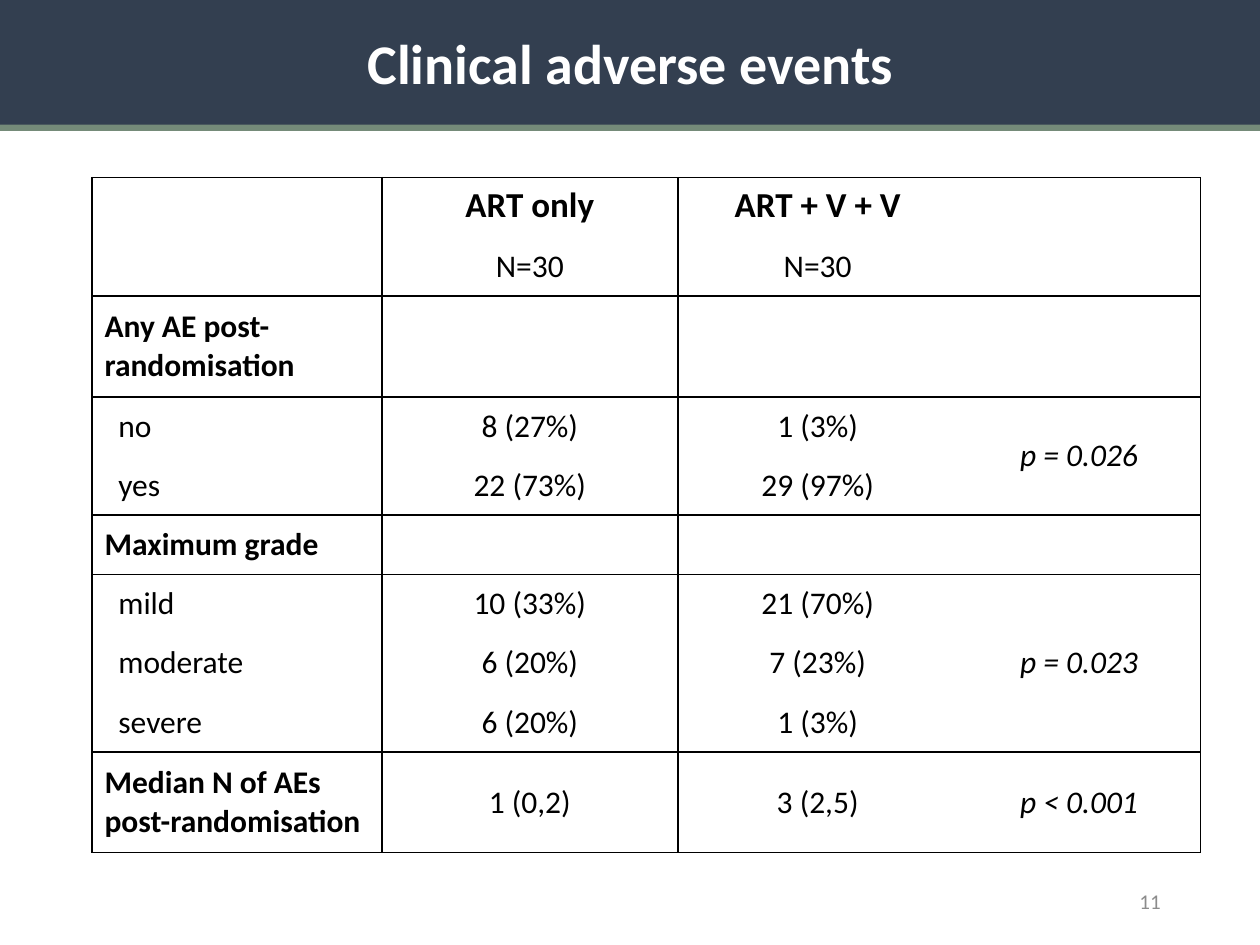
from dataclasses import dataclass

from lxml import etree
from pptx import Presentation
from pptx.dml.color import RGBColor
from pptx.enum.shapes import MSO_CONNECTOR, MSO_SHAPE
from pptx.enum.text import MSO_ANCHOR, PP_ALIGN
from pptx.oxml.ns import qn
from pptx.util import Inches, Pt

LEFT, CENTER, RIGHT = PP_ALIGN.LEFT, PP_ALIGN.CENTER, PP_ALIGN.RIGHT
MIDDLE, TOP = MSO_ANCHOR.MIDDLE, MSO_ANCHOR.TOP


@dataclass(frozen=True)
class Theme:
    font: str = "Calibri"
    banner: str = "333F50"
    accent: str = "758B79"
    light: str = "FFFFFF"
    ink: str = "000000"
    muted: str = "8C8C8C"
    title_size: int = 32
    arm_size: int = 20
    body_size: int = 18
    number_size: int = 12
    rule_width: float = 1
    accent_width: float = 4.5


@dataclass(frozen=True)
class Row:
    label: str = ""
    art_only: str = ""
    art_plus: str = ""
    p_value: str = ""
    heading: bool = False  # bold label, no indent
    p_span: int = 1        # rows covered by the p value
    ends_group: bool = False
    height: float = 0.47


THEME = Theme()
COLUMN_WIDTHS = (2.3, 2.35, 2.22, 1.93)
RULED_COLUMNS = (0, 1, 3)  # columns with a rule on their right
SUB_INDENT = 0.11
CELL_MARGIN = 0.1

ROWS = (
    Row("", "ART only", "ART + V + V"),
    Row("", "N=30", "N=30", ends_group=True),
    Row("Any AE post-randomisation", heading=True, ends_group=True, height=0.8),
    Row("no", "8 (27%)", "1 (3%)", "p = 0.026", p_span=2),
    Row("yes", "22 (73%)", "29 (97%)", ends_group=True),
    Row("Maximum grade", heading=True, ends_group=True),
    Row("mild", "10 (33%)", "21 (70%)", "p = 0.023", p_span=3),
    Row("moderate", "6 (20%)", "7 (23%)"),
    Row("severe", "6 (20%)", "1 (3%)", ends_group=True),
    Row("Median N of AEs post-randomisation", "1 (0,2)", "3 (2,5)", "p < 0.001",
        heading=True, ends_group=True, height=0.8),
)


def write_text(frame, text: str, *, size: float = THEME.body_size, color: str = THEME.ink,
               bold: bool = False, italic: bool = False, align=LEFT) -> None:
    para = frame.paragraphs[0]
    para.alignment = align
    span = para.add_run()
    span.text = text
    span.font.name = THEME.font
    span.font.size = Pt(size)
    span.font.bold = bold
    span.font.italic = italic
    span.font.color.rgb = RGBColor.from_string(color)


def set_borders(cell, sides: dict[str, bool]) -> None:
    properties = cell._tc.get_or_add_tcPr()
    for side, visible in sides.items():
        line = etree.SubElement(properties, qn(f"a:ln{side}"), w=str(Pt(THEME.rule_width)))
        if visible:
            fill = etree.SubElement(line, qn("a:solidFill"))
            etree.SubElement(fill, qn("a:srgbClr"), val=THEME.ink)
        else:
            etree.SubElement(line, qn("a:noFill"))


def add_banner(page) -> None:
    rule = page.shapes.add_connector(MSO_CONNECTOR.STRAIGHT, Inches(0), Inches(1.01),
                                     Inches(10.03), Inches(1.01))
    rule.line.color.rgb = RGBColor.from_string(THEME.accent)
    rule.line.width = Pt(THEME.accent_width)
    etree.SubElement(rule._element.spPr, qn("a:effectLst"))

    banner = page.shapes.add_shape(MSO_SHAPE.RECTANGLE, Inches(0), Inches(0),
                                   Inches(10.01), Inches(0.99))
    banner.shadow.inherit = False
    banner.fill.solid()
    banner.fill.fore_color.rgb = RGBColor.from_string(THEME.banner)
    banner.line.fill.background()
    banner.text_frame.vertical_anchor = MIDDLE
    write_text(banner.text_frame, "Clinical adverse events", size=THEME.title_size,
               color=THEME.light, bold=True, align=CENTER)


def fill_cell(table, row_index: int, column: int) -> None:
    row, cell = ROWS[row_index], table.cell(row_index, column)
    last = row_index + (cell.span_height if cell.is_merge_origin else 1) - 1
    set_borders(cell, {
        "L": column == 0 or column - 1 in RULED_COLUMNS,
        "R": column in RULED_COLUMNS,
        "T": row_index == 0 or ROWS[row_index - 1].ends_group,
        "B": ROWS[last].ends_group,
    })
    cell.fill.background()
    is_header = row_index == 0
    cell.vertical_anchor = TOP if is_header else MIDDLE
    is_label = column == 0
    if is_label and not row.heading:
        cell.margin_left = Inches(CELL_MARGIN + SUB_INDENT)
    text = (row.label, row.art_only, row.art_plus, row.p_value)[column]
    if text:
        write_text(cell.text_frame, text,
                   size=THEME.arm_size if is_header else THEME.body_size,
                   bold=is_header or (is_label and row.heading),
                   italic=column == 3, align=LEFT if is_label else CENTER)


def add_events_table(page) -> None:
    frame = page.shapes.add_table(len(ROWS), len(COLUMN_WIDTHS), Inches(0.73), Inches(1.41),
                                  Inches(sum(COLUMN_WIDTHS)),
                                  Inches(sum(row.height for row in ROWS)))
    table = frame.table
    table.first_row = table.horz_banding = False
    for column, width in zip(table.columns, COLUMN_WIDTHS):
        column.width = Inches(width)
    for index, row in enumerate(ROWS):
        table.rows[index].height = Inches(row.height)
        if row.p_span > 1:
            table.cell(index, 3).merge(table.cell(index + row.p_span - 1, 3))
    for index in range(len(ROWS)):
        for column in range(len(COLUMN_WIDTHS)):
            fill_cell(table, index, column)


def add_page_number(page) -> None:
    box = page.shapes.add_textbox(Inches(7.06), Inches(6.95), Inches(2.25), Inches(0.4))
    box.text_frame.word_wrap = True
    box.text_frame.vertical_anchor = MIDDLE
    write_text(box.text_frame, "11", size=THEME.number_size, color=THEME.muted, align=RIGHT)


def main() -> None:
    deck = Presentation()
    deck.slide_width, deck.slide_height = Inches(10), Inches(7.5)
    page = deck.slides.add_slide(deck.slide_layouts[6])
    add_page_number(page)
    add_banner(page)
    add_events_table(page)
    deck.save("out.pptx")


if __name__ == "__main__":
    main()
